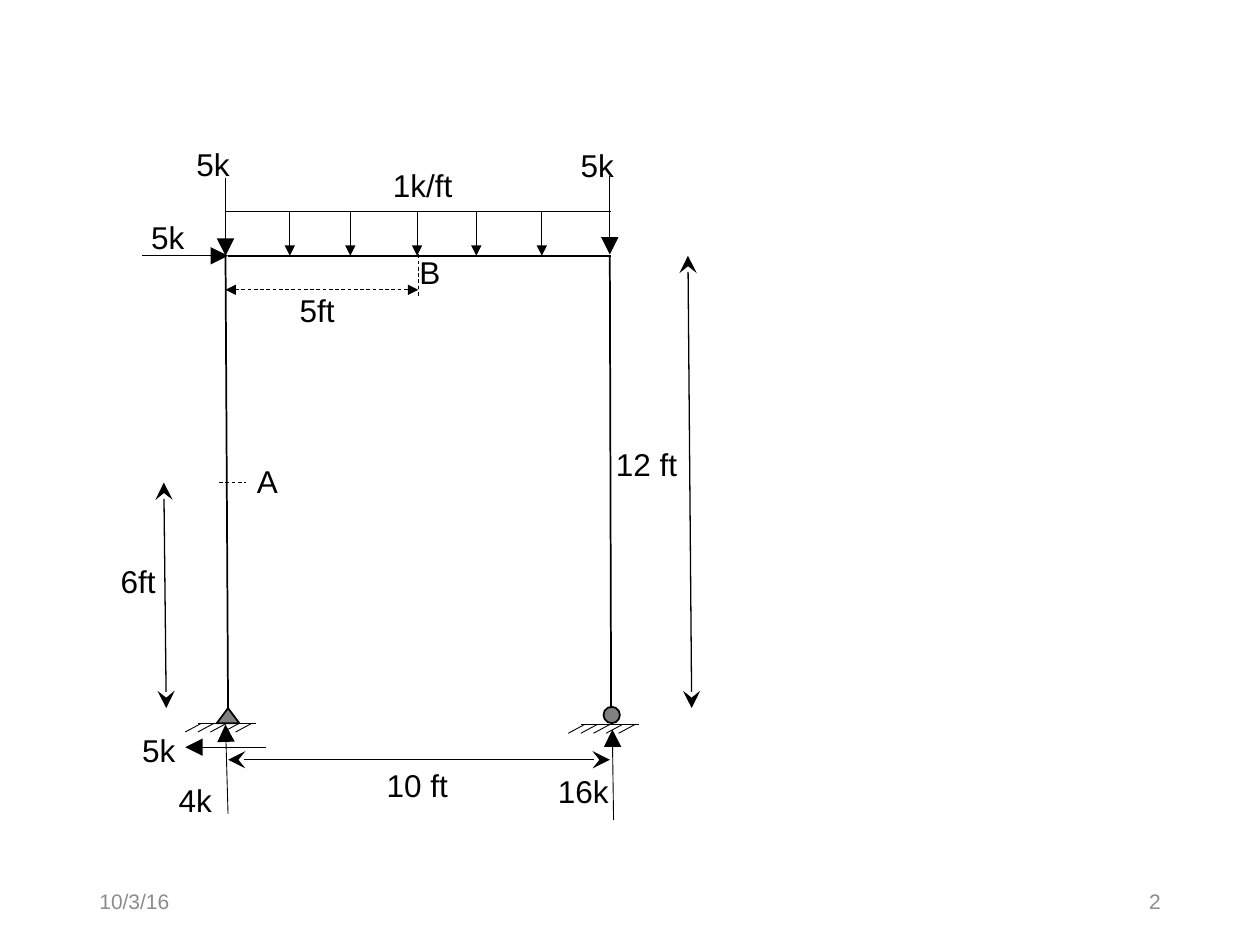
from typing import NamedTuple

import pptx
import pptx.dml.color
import pptx.enum.dml
import pptx.enum.shapes
import pptx.enum.text
import pptx.oxml
import pptx.oxml.ns
import pptx.util

Inches = pptx.util.Inches
Pt = pptx.util.Pt
MSO_SHAPE = pptx.enum.shapes.MSO_SHAPE
PP_ALIGN = pptx.enum.text.PP_ALIGN
MSO_ANCHOR = pptx.enum.text.MSO_ANCHOR


class Line(NamedTuple):
    x1: float
    y1: float
    x2: float
    y2: float
    width: float = 0.5
    head: str = ""
    tail: str = ""
    size: str = "med"
    dashed: bool = False


class Label(NamedTuple):
    text: str
    x: float
    y: float
    w: float
    size: int = 18
    color: str = "000000"
    align: PP_ALIGN = PP_ALIGN.LEFT
    anchor: MSO_ANCHOR = MSO_ANCHOR.TOP


class Support(NamedTuple):
    kind: MSO_SHAPE
    x: float
    y: float
    w: float
    h: float
    ground_x: float
    ground_y: float


def rgb(color: str) -> pptx.dml.color.RGBColor:
    return pptx.dml.color.RGBColor.from_string(color)


def add_xml(parent, tag: str, **attrs: str) -> None:
    el = pptx.oxml.parse_xml(f"<a:{tag} {pptx.oxml.ns.nsdecls('a')}/>")
    for key, value in attrs.items():
        el.set(key, value)
    parent.append(el)


def draw_line(s, line: Line) -> None:
    c = s.shapes.add_connector(
        pptx.enum.shapes.MSO_CONNECTOR.STRAIGHT,
        Inches(line.x1), Inches(line.y1), Inches(line.x2), Inches(line.y2))
    c.line.color.rgb = rgb("000000")
    c.line.width = Pt(line.width)
    if line.dashed:
        c.line.dash_style = pptx.enum.dml.MSO_LINE.DASH
    ln = c.line._get_or_add_ln()
    for tag, kind in (("headEnd", line.head), ("tailEnd", line.tail)):
        if kind:
            add_xml(ln, tag, type=kind, w=line.size, len=line.size)
    add_xml(c._element.spPr, "effectLst")


def draw_label(s, label: Label) -> None:
    tf = s.shapes.add_textbox(
        Inches(label.x), Inches(label.y), Inches(label.w), Inches(0.4)).text_frame
    tf.word_wrap = True
    tf.vertical_anchor = label.anchor
    p = tf.paragraphs[0]
    p.text = label.text
    p.alignment = label.align
    p.font.name = "Arial"
    p.font.size = Pt(label.size)
    p.font.color.rgb = rgb(label.color)


def draw_support(s, sup: Support) -> None:
    x, y = sup.ground_x, sup.ground_y
    draw_line(s, Line(x, y, x + 0.46, y))
    for i in range(5):
        top = x + 0.03 + 0.1 * i
        draw_line(s, Line(top, y, top - 0.13, y + 0.07))
    sp = s.shapes.add_shape(
        sup.kind, Inches(sup.x), Inches(sup.y), Inches(sup.w), Inches(sup.h))
    sp.shadow.inherit = False
    sp.fill.solid()
    sp.fill.fore_color.rgb = rgb("808080")
    sp.line.color.rgb = rgb("000000")
    sp.line.width = Pt(1)


def dimension(x1: float, y1: float, x2: float, y2: float) -> Line:
    return Line(x1, y1, x2, y2, 0.75, "stealth", "stealth", "lg")


def force(x1: float, y1: float, x2: float, y2: float, size: str = "lg") -> Line:
    return Line(x1, y1, x2, y2, tail="triangle", size=size)


FRAME = [
    Line(1.81, 5.62, 1.79, 2.03, 1),
    Line(4.85, 2.03, 1.81, 2.03, 1),
    Line(4.85, 5.62, 4.84, 2.03, 1),
]
DIMENSIONS = [
    dimension(5.46, 2.03, 5.49, 5.62),
    dimension(1.81, 6.03, 4.84, 6.03),
    dimension(1.3, 3.83, 1.32, 5.62),
    Line(1.79, 2.3, 3.32, 2.3, head="triangle", tail="triangle", dashed=True),
    Line(3.32, 2.02, 3.32, 2.35, dashed=True),
    Line(1.74, 3.83, 1.95, 3.83, dashed=True),
]
POINT_LOADS = [
    force(1.13, 2.03, 1.81, 2.03),
    force(1.79, 1.41, 1.79, 2.03),
    force(4.84, 1.4, 4.84, 2.02),
]
DISTRIBUTED_LOAD = [Line(1.79, 1.68, 4.85, 1.68)] + [
    force(x, 1.68, x, 2.03, "med") for x in (2.3, 2.78, 3.31, 3.78, 4.3)]
REACTIONS = [
    force(2.11, 5.93, 1.47, 5.93),
    force(1.81, 6.46, 1.79, 5.75),
    force(4.87, 6.51, 4.86, 5.79),
]
SUPPORTS = [
    Support(MSO_SHAPE.ISOSCELES_TRIANGLE, 1.72, 5.62, 0.18, 0.12, 1.57, 5.74),
    Support(MSO_SHAPE.OVAL, 4.79, 5.61, 0.13, 0.13, 4.61, 5.75),
]
LABELS = [
    Label("10/3/16", 0.69, 6.95, 2.25, 12, "8C8C8C", anchor=MSO_ANCHOR.MIDDLE),
    Label("2", 7.06, 6.95, 2.25, 12, "8C8C8C", PP_ALIGN.RIGHT, MSO_ANCHOR.MIDDLE),
    Label("12 ft", 4.79, 3.48, 0.81),
    Label("5k", 1.1, 1.68, 0.61),
    Label("5k", 1.46, 1.1, 0.58),
    Label("5k", 4.51, 1.11, 0.57),
    Label("1k/ft", 3.02, 1.27, 0.8),
    Label("A", 1.94, 3.62, 0.36),
    Label("6ft", 0.86, 4.41, 0.8),
    Label("5ft", 2.28, 2.26, 0.8),
    Label("B", 3.23, 1.96, 0.28),
    Label("5k", 1.03, 5.75, 0.53),
    Label("4k", 1.32, 6.15, 0.59),
    Label("16k", 4.33, 6.08, 0.63),
    Label("10 ft", 2.97, 6.03, 0.81),
]


def main() -> None:
    prs = pptx.Presentation()
    prs.slide_width, prs.slide_height = Inches(10), Inches(7.5)
    s = prs.slides.add_slide(prs.slide_layouts[6])
    for line in FRAME + DIMENSIONS + POINT_LOADS + DISTRIBUTED_LOAD + REACTIONS:
        draw_line(s, line)
    for sup in SUPPORTS:
        draw_support(s, sup)
    for label in LABELS:
        draw_label(s, label)
    prs.save("out.pptx")


if __name__ == "__main__":
    main()
